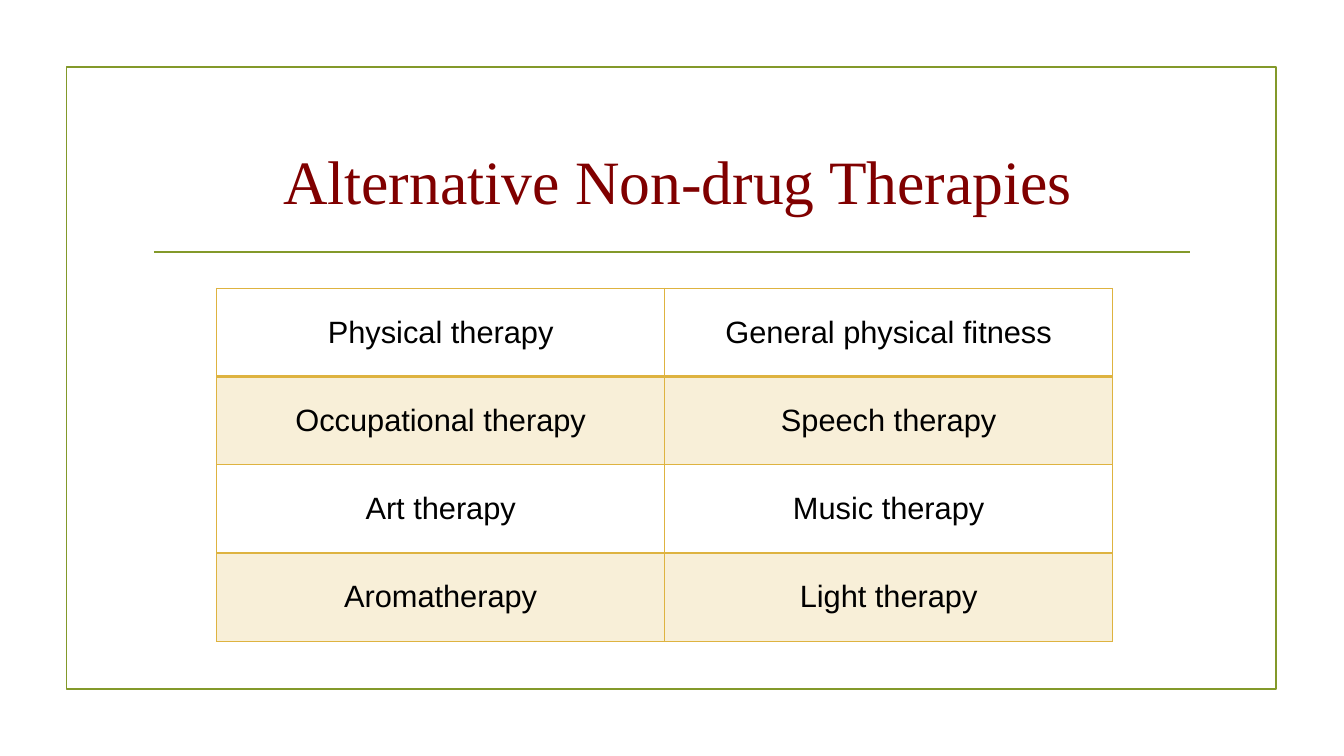
import dataclasses

import lxml.etree
import pptx
import pptx.dml.color
import pptx.enum.shapes
import pptx.enum.text
import pptx.oxml.ns
import pptx.util

Pt = pptx.util.Pt
qn = pptx.oxml.ns.qn

GREEN = "83992A"
GOLD = "DEB340"
MAROON = "800000"
BLACK = "000000"
THIN, THICK = 1, 2
EDGE = 1.25


@dataclasses.dataclass
class Row:
    left: str
    right: str
    shaded: bool = False
    top: float = THIN
    bottom: float = THIN


ROWS = [
    Row("Physical therapy", "General physical fitness", bottom=THICK),
    Row("Occupational therapy", "Speech therapy", shaded=True, top=THICK),
    Row("Art therapy", "Music therapy"),
    Row("Aromatherapy", "Light therapy", shaded=True),
]


def color(code: str) -> pptx.dml.color.RGBColor:
    return pptx.dml.color.RGBColor.from_string(code)


def write(frame, text: str, face: str, size: float, code: str) -> None:
    para = frame.paragraphs[0]
    para.alignment = pptx.enum.text.PP_ALIGN.CENTER
    run = para.add_run()
    run.text = text
    run.font.name = face
    run.font.size = Pt(size)
    run.font.bold = False
    run.font.color.rgb = color(code)


def border(cell, side: str, width: float) -> None:
    props = cell._tc.get_or_add_tcPr()
    line = lxml.etree.SubElement(props, qn(f"a:ln{side}"), w=str(Pt(width)))
    fill = lxml.etree.SubElement(line, qn("a:solidFill"))
    lxml.etree.SubElement(fill, qn("a:srgbClr"), val=GOLD)


def shade(cell, percent: int) -> None:
    cell.fill.solid()
    cell.fill.fore_color.rgb = color(GOLD)
    tint = cell._tc.tcPr.find(f"{qn('a:solidFill')}/{qn('a:srgbClr')}")
    lxml.etree.SubElement(tint, qn("a:alpha"), val=str(percent * 1000))


def fill_cell(cell, text: str, row: Row) -> None:
    cell.vertical_anchor = pptx.enum.text.MSO_ANCHOR.MIDDLE
    write(cell.text_frame, text, "Arial", 22, BLACK)
    for side, width in zip("LRTB", (THIN, THIN, row.top, row.bottom)):
        border(cell, side, width)
    if row.shaded:
        shade(cell, 20)
    else:
        cell.fill.background()


def add_frame(slide) -> None:
    frame = slide.shapes.add_shape(
        pptx.enum.shapes.MSO_SHAPE.RECTANGLE, Pt(47.5), Pt(48), Pt(864), Pt(444)
    )
    frame.shadow.inherit = False
    frame.fill.background()
    frame.line.color.rgb = color(GREEN)
    frame.line.width = Pt(EDGE)


def add_rule(slide) -> None:
    rule = slide.shapes.add_connector(
        pptx.enum.shapes.MSO_CONNECTOR.STRAIGHT, Pt(110), Pt(180), Pt(850), Pt(180)
    )
    rule.line.color.rgb = color(GREEN)
    rule.line.width = Pt(EDGE)
    lxml.etree.SubElement(rule._element.spPr, qn("a:effectLst"))


def add_title(slide) -> None:
    title = slide.shapes.title
    title.left, title.top = Pt(102), Pt(77)
    title.width, title.height = Pt(756), Pt(103)
    title.text_frame.vertical_anchor = pptx.enum.text.MSO_ANCHOR.MIDDLE
    write(title.text_frame, " Alternative Non-drug Therapies", "Times New Roman", 44, MAROON)


def add_grid(slide) -> None:
    grid = slide.shapes.add_table(
        len(ROWS), 2, Pt(154.8), Pt(206), Pt(640), Pt(63 * len(ROWS))
    ).table
    grid.first_row = False
    grid.horz_banding = False
    for index, row in enumerate(ROWS):
        for col, text in enumerate((row.left, row.right)):
            fill_cell(grid.cell(index, col), text, row)


def main() -> None:
    deck = pptx.Presentation()
    deck.slide_width, deck.slide_height = Pt(960), Pt(540)
    slide = deck.slides.add_slide(deck.slide_layouts[5])
    add_frame(slide)
    add_rule(slide)
    add_title(slide)
    add_grid(slide)
    deck.save("out.pptx")


if __name__ == "__main__":
    main()
